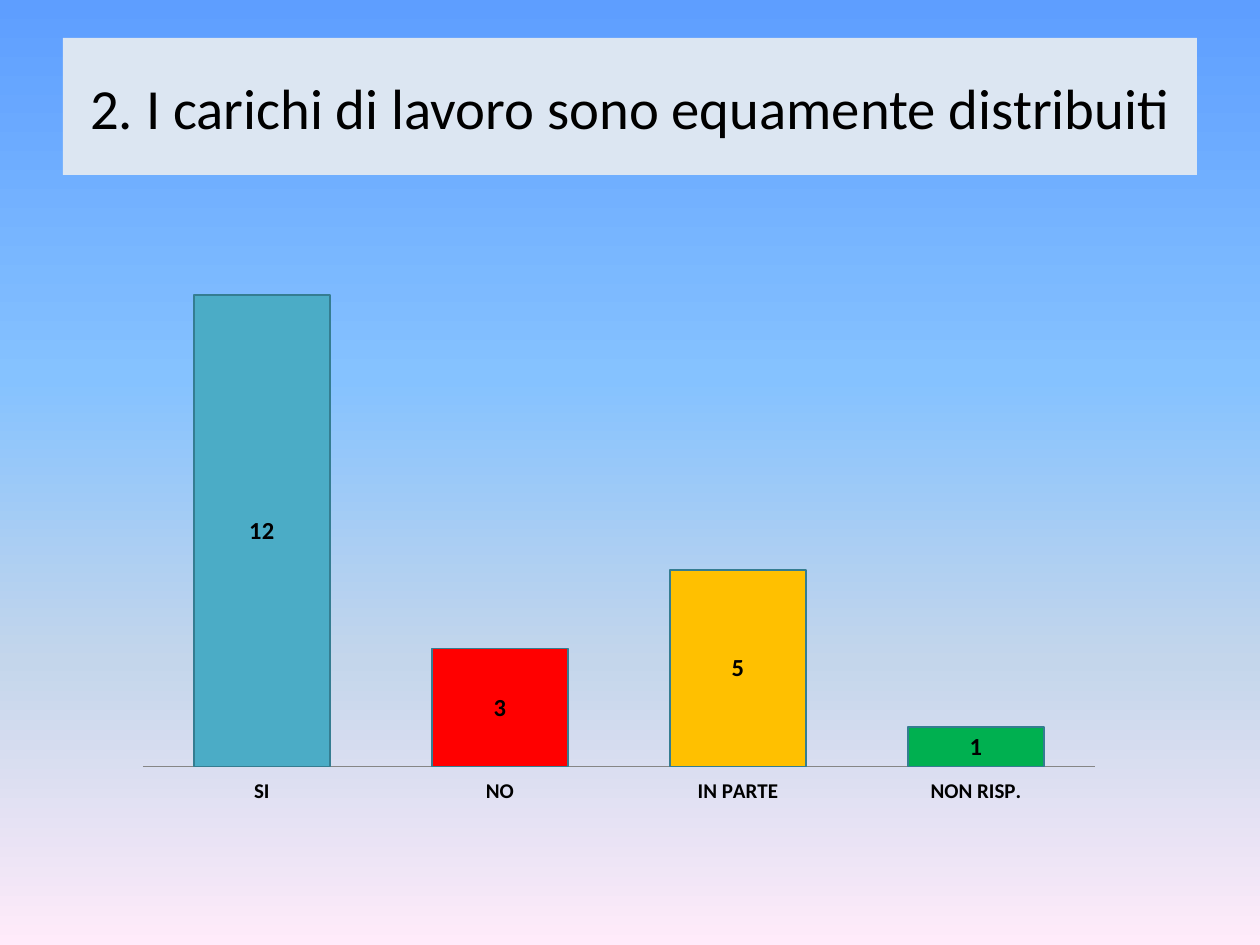
from lxml.etree import SubElement
from pptx import Presentation
from pptx.chart.data import CategoryChartData
from pptx.dml.color import RGBColor
from pptx.enum.chart import XL_CHART_TYPE, XL_LABEL_POSITION, XL_TICK_LABEL_POSITION, XL_TICK_MARK
from pptx.enum.shapes import MSO_SHAPE
from pptx.enum.text import MSO_ANCHOR, PP_ALIGN
from pptx.oxml import parse_xml
from pptx.oxml.ns import nsdecls, qn
from pptx.util import Emu, Pt

FONT = "Calibri"
BLACK = RGBColor(0x00, 0x00, 0x00)
PALE = RGBColor(0xDC, 0xE6, 0xF2)
GRAY = RGBColor(0x86, 0x86, 0x86)
EDGE = RGBColor(0x35, 0x7D, 0x91)
TEAL = RGBColor(0x4B, 0xAC, 0xC6)
RED = RGBColor(0xFF, 0x00, 0x00)
AMBER = RGBColor(0xFF, 0xC0, 0x00)
GREEN = RGBColor(0x00, 0xB0, 0x50)
SKY = [
    (0, RGBColor(0x5E, 0x9E, 0xFF)),
    (40, RGBColor(0x85, 0xC2, 0xFF)),
    (70, RGBColor(0xC4, 0xD6, 0xEB)),
    (100, RGBColor(0xFF, 0xEB, 0xFA)),
]
BARS = [("SI", 12, TEAL), ("NO", 3, RED), ("IN PARTE", 5, AMBER), ("NON RISP.", 1, GREEN)]


def px(n):
    return Emu(round(n * 914400 / 126))


def style(font, size, bold=False):
    font.name = FONT
    font.size = Pt(size)
    font.bold = bold
    font.color.rgb = BLACK


def paint_sky(slide):
    fill = slide.background.fill
    fill.gradient()
    fill.gradient_angle = 270
    stops = next(slide.element.iter(qn("a:gsLst")))
    for stop in list(stops):
        stops.remove(stop)
    for pos, color in SKY:
        stop = SubElement(stops, qn("a:gs"), pos=str(pos * 1000))
        SubElement(stop, qn("a:srgbClr"), val=str(color))


def add_title(slide, box, text):
    shape = slide.shapes.add_shape(MSO_SHAPE.RECTANGLE, *map(px, box))
    shape.shadow.inherit = False
    shape.fill.solid()
    shape.fill.fore_color.rgb = PALE
    shape.line.fill.background()
    frame = shape.text_frame
    frame.word_wrap = True
    frame.vertical_anchor = MSO_ANCHOR.MIDDLE
    frame.text = text
    para = frame.paragraphs[0]
    para.alignment = PP_ALIGN.CENTER
    style(para.runs[0].font, 32.4)


def set_plot(chart, x, y, w, h):
    # Fix the inner plot area as fractions of the chart
    area = chart.element.chart.plotArea
    for old in area.findall(qn("c:layout")):
        area.remove(old)
    area.insert(0, parse_xml(
        f'<c:layout {nsdecls("c")}><c:manualLayout><c:layoutTarget val="inner"/>'
        f'<c:xMode val="edge"/><c:yMode val="edge"/><c:x val="{x}"/><c:y val="{y}"/>'
        f'<c:w val="{w}"/><c:h val="{h}"/></c:manualLayout></c:layout>'))


def add_bars(slide, box):
    data = CategoryChartData()
    data.categories = [name for name, _, _ in BARS]
    data.add_series("Series 1", [value for _, value, _ in BARS])
    chart = slide.shapes.add_chart(XL_CHART_TYPE.COLUMN_STACKED, *map(px, box), data).chart
    chart.has_legend = False
    chart.has_title = False
    style(chart.font, 10)
    set_plot(chart, 0.02, 0.02, 0.96, 0.91)

    # Axes
    axis = chart.category_axis
    axis.major_tick_mark = XL_TICK_MARK.NONE
    axis.tick_label_position = XL_TICK_LABEL_POSITION.LOW
    axis.format.line.color.rgb = GRAY
    style(axis.tick_labels.font, 12, True)
    scale = chart.value_axis
    scale.minimum_scale = 0
    scale.maximum_scale = 14
    scale.has_major_gridlines = False
    scale.visible = False

    # Columns and their values
    plot = chart.plots[0]
    plot.gap_width = 75
    plot.overlap = 100
    plot.vary_by_categories = False
    series = plot.series[0]
    for i, (_, _, color) in enumerate(BARS):
        part = series.points[i].format
        part.fill.solid()
        part.fill.fore_color.rgb = color
        part.line.color.rgb = EDGE
        part.line.width = Pt(1)
    labels = series.data_labels
    labels.show_value = True
    labels.position = XL_LABEL_POSITION.CENTER
    style(labels.font, 14, True)


def main():
    deck = Presentation()
    deck.slide_width, deck.slide_height = px(1260), px(945)
    slide = deck.slides.add_slide(deck.slide_layouts[6])
    paint_sky(slide)
    add_title(slide, (63, 38, 1134, 137), "2. I carichi di lavoro sono equamente distribuiti")
    add_bars(slide, (123, 204, 992, 605))
    deck.save("out.pptx")


if __name__ == "__main__":
    main()
